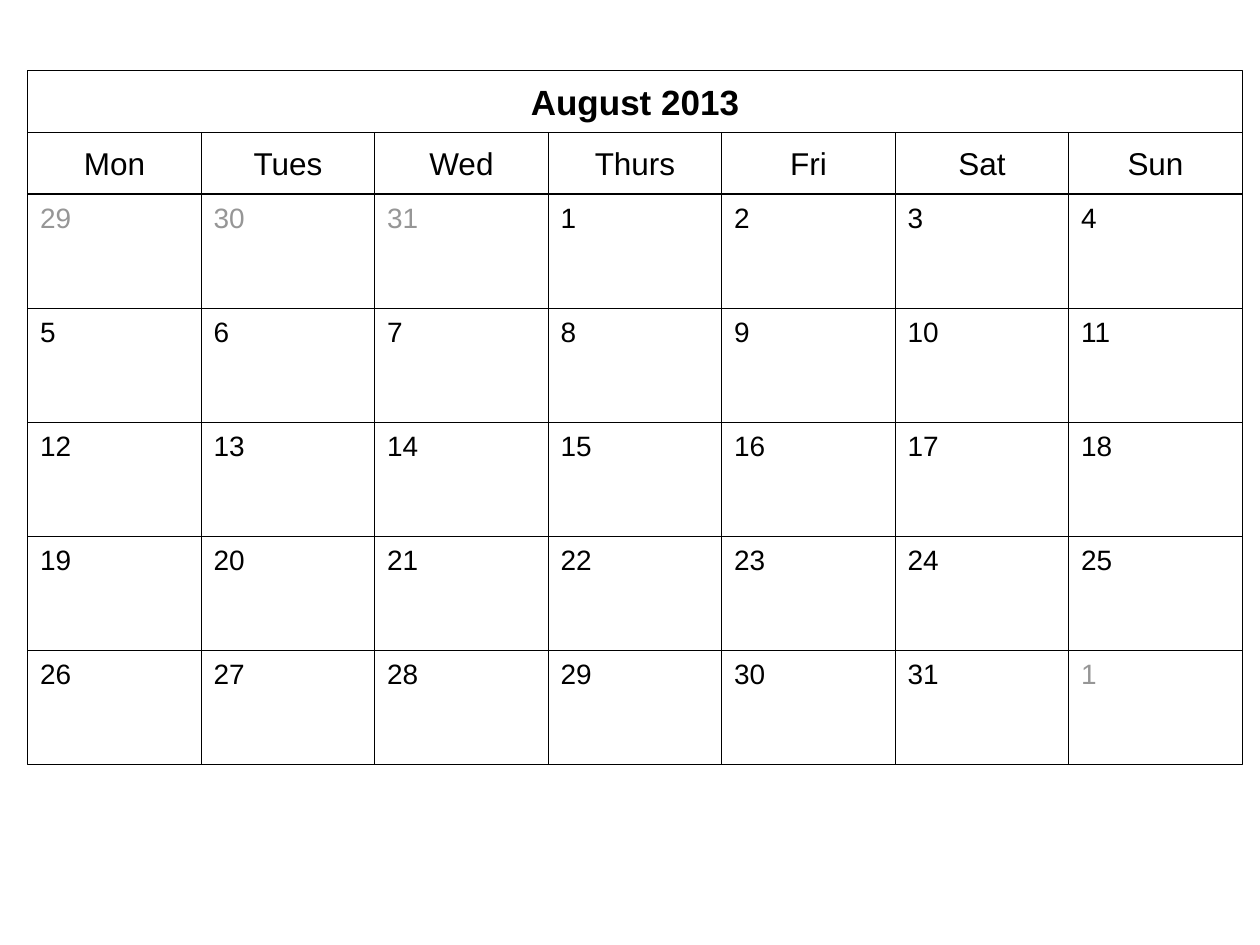
from pptx import Presentation
from pptx.dml.color import RGBColor
from pptx.enum.shapes import MSO_SHAPE
from pptx.enum.text import MSO_ANCHOR, MSO_AUTO_SIZE, PP_ALIGN
from pptx.util import Inches, Pt

RECT = MSO_SHAPE.RECTANGLE
TOP, MIDDLE = MSO_ANCHOR.TOP, MSO_ANCHOR.MIDDLE
LEFT, CENTER = PP_ALIGN.LEFT, PP_ALIGN.CENTER
FIXED = MSO_AUTO_SIZE.NONE

MONTH = "August 2013"
DAYS = ["Mon", "Tues", "Wed", "Thurs", "Fri", "Sat", "Sun"]
BEFORE = [29, 30, 31]
DATES = list(range(1, 32))
AFTER = [1]

COLORS = {"ink": "000000", "paper": "FFFFFF", "faded": "969696"}
FONT = "Arial"

X, Y = 0.22, 0.56
WIDTH = 9.64
HEAD = 0.49
WEEKS = 4.53
COLS = len(DAYS)
COL = WIDTH / COLS
WEEK = WEEKS / ((len(BEFORE) + len(DATES) + len(AFTER)) // COLS)


def color(name):
    return RGBColor.from_string(COLORS[name])


def place(shape, x, y, w, h):
    shape.left, shape.top = Inches(x), Inches(y)
    shape.width, shape.height = Inches(w), Inches(h)


def style(shape, text, size, ink="ink", head=False, bold=False):
    """Outline a cell and set its text; head cells are filled and centred."""
    shape.line.color.rgb = color("ink")
    shape.line.width = Pt(0.75)
    if head:
        shape.fill.solid()
        shape.fill.fore_color.rgb = color("paper")
    else:
        shape.fill.background()
    frame = shape.text_frame
    frame.text = text
    frame.word_wrap = True
    frame.auto_size = FIXED
    frame.vertical_anchor = MIDDLE if head else TOP
    frame.margin_left = frame.margin_right = Inches(0.1)
    frame.margin_top = frame.margin_bottom = Inches(0.02 if head else 0.05)
    line = frame.paragraphs[0]
    line.alignment = CENTER if head else LEFT
    font = line.runs[0].font
    font.name, font.size, font.bold = FONT, Pt(size), bold
    font.color.rgb = color(ink)


def add_cell(slide, col, y, h, text, size, **look):
    cell = slide.shapes.add_shape(RECT, 0, 0, 0, 0)
    cell.shadow.inherit = False
    place(cell, X + col * COL, y, COL, h)
    style(cell, text, size, **look)


def main():
    deck = Presentation()
    deck.slide_width, deck.slide_height = Inches(10), Inches(7.5)
    slide = deck.slides.add_slide(deck.slide_layouts.get_by_name("Title Only"))

    title = slide.shapes.title
    place(title, X, Y, WIDTH, HEAD)
    style(title, MONTH, 20, head=True, bold=True)

    for col, day in enumerate(DAYS):
        add_cell(slide, col, Y + HEAD, HEAD, day, 18, head=True)

    dates = [(date, "faded") for date in BEFORE]
    dates += [(date, "ink") for date in DATES]
    dates += [(date, "faded") for date in AFTER]
    for i, (date, ink) in enumerate(dates):
        row, col = divmod(i, COLS)
        y = Y + 2 * HEAD + row * WEEK
        add_cell(slide, col, y, WEEK, str(date), 16, ink=ink)

    deck.save("out.pptx")


if __name__ == "__main__":
    main()
